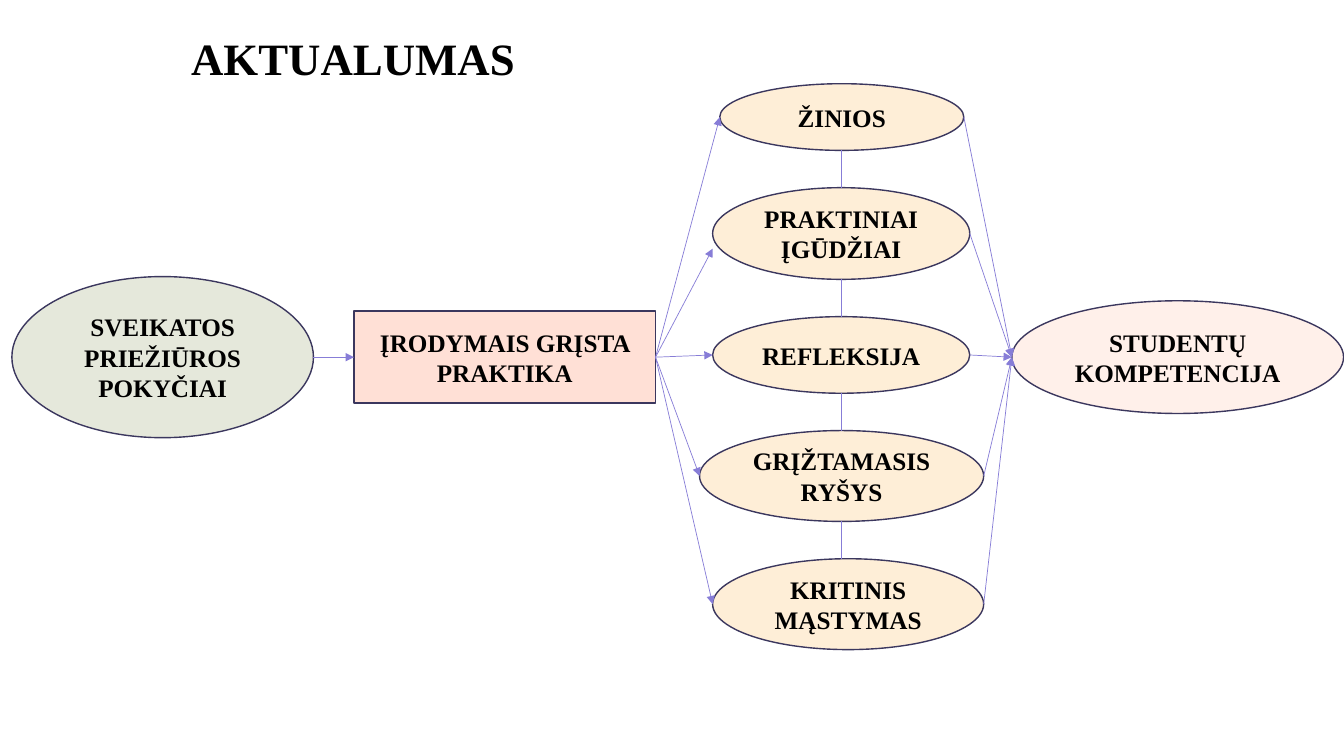
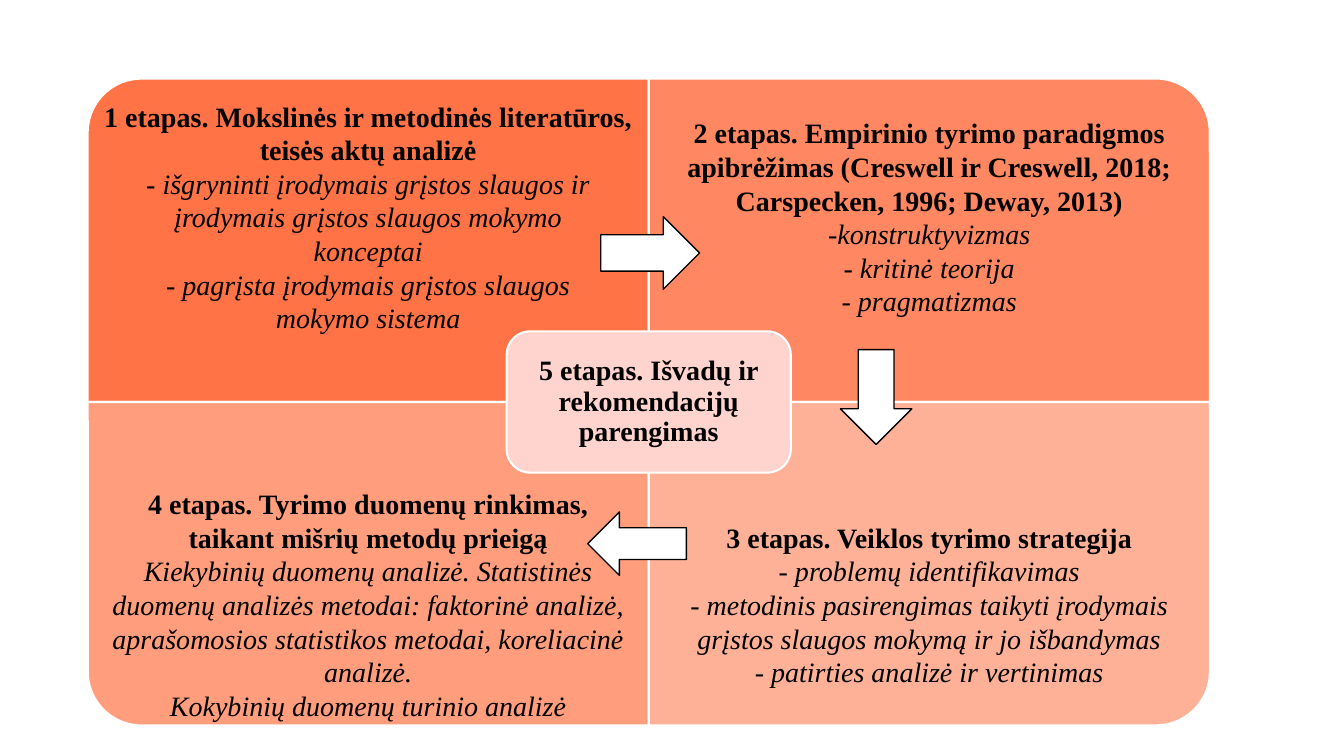
"""Builds two slides: a relevance diagram and the five stages of a study."""
from lxml import etree
from pptx import Presentation
from pptx.dml.color import RGBColor
from pptx.enum import shapes as kinds, text as layout
from pptx.oxml import ns
from pptx.util import Cm, Pt

FONT = "Times New Roman"
BLACK = RGBColor(0x00, 0x00, 0x00)
WHITE = RGBColor(0xFF, 0xFF, 0xFF)
OUTLINE = RGBColor(0x3B, 0x37, 0x5E)
LINK = RGBColor(0x87, 0x7D, 0xD7)
GREEN = RGBColor(0xE5, 0xE8, 0xDB)
PEACH = RGBColor(0xFF, 0xE0, 0xD6)
CREAM = RGBColor(0xFE, 0xEE, 0xD7)
BLUSH = RGBColor(0xFF, 0xF0, 0xEA)
ORANGE = RGBColor(0xFF, 0x64, 0x32)
PINK = RGBColor(0xFF, 0xD3, 0xCE)
SHAPE = kinds.MSO_SHAPE

FACTORS = [
    ("ŽINIOS", 18.14, 6.15, 1.68, 0),
    ("PRAKTINIAI ĮGŪDŽIAI", 17.96, 6.48, 2.31, 0.38),
    ("REFLEKSIJA", 17.96, 6.48, 1.93, 0),
    ("GRĮŽTAMASIS RYŠYS", 17.63, 7.16, 2.29, 0),
    ("KRITINIS MĄSTYMAS", 17.96, 6.83, 2.29, 0),
]
FACTOR_TOP, FACTOR_GAP, FACTOR_AXIS = 2.11, 0.94, 21.2
MIDDLE = 9.0

QUARTER_LEFT, QUARTER_TOP = 2.21, 1.98
QUARTER_WIDTH, QUARTER_HEIGHT = 14.14, 8.15
STAGE_TEXT_HEIGHT = 6.12
STAGES = [
    (0, 0, 270, 90, 2.4, [
        "1 etapas. Mokslinės ir metodinės literatūros, teisės aktų analizė",
        "- išgryninti įrodymais grįstos slaugos ir įrodymais grįstos slaugos mokymo",
        "konceptai",
        "- pagrįsta įrodymais grįstos slaugos",
        "mokymo sistema"]),
    (1, 0, 0, 77, 2.4, [
        "2 etapas. Empirinio tyrimo paradigmos apibrėžimas "
        "(Creswell ir Creswell, 2018; Carspecken, 1996; Deway, 2013)",
        "-konstruktyvizmas",
        "- kritinė teorija",
        "- pragmatizmas"]),
    (0, 1, 180, 63, 12.17, [
        "4 etapas. Tyrimo duomenų rinkimas, taikant mišrių metodų prieigą",
        "Kiekybinių duomenų analizė. Statistinės duomenų analizės metodai: "
        "faktorinė analizė, aprašomosios statistikos metodai, koreliacinė analizė.",
        "Kokybinių duomenų turinio analizė"]),
    (1, 1, 90, 50, 12.17, [
        "3 etapas. Veiklos tyrimo strategija",
        "- problemų identifikavimas",
        "- metodinis pasirengimas taikyti įrodymais grįstos slaugos mokymą "
        "ir jo išbandymas",
        "- patirties analizė ir vertinimas"]),
]
ARROWS = [
    (SHAPE.RIGHT_ARROW, 15.14, 5.46, 2.49, 1.83),
    (SHAPE.DOWN_ARROW, 21.18, 8.81, 1.8, 2.39),
    (SHAPE.LEFT_ARROW, 14.81, 12.9, 2.49, 1.6),
]


def write(box, lines, size=18, spacing=1.0, margin=None):
    """Fill a box with a bold first line and italic lines after it."""
    frame = box.text_frame
    frame.word_wrap = True
    frame.vertical_anchor = layout.MSO_ANCHOR.MIDDLE
    if margin is not None:
        frame.margin_left = frame.margin_right = Cm(margin)
        frame.margin_top = frame.margin_bottom = Cm(margin)
    for index, line in enumerate(lines):
        para = frame.add_paragraph() if index else frame.paragraphs[0]
        para.alignment = layout.PP_ALIGN.CENTER
        para.line_spacing = spacing
        span = para.add_run()
        span.text = line
        span.font.name, span.font.size = FONT, Pt(size)
        span.font.color.rgb = BLACK
        span.font.bold, span.font.italic = index == 0, index > 0


def add_text(page, left, top, width, height, lines, **style):
    """Add a text box."""
    box = page.shapes.add_textbox(Cm(left), Cm(top), Cm(width), Cm(height))
    write(box, lines, **style)


def add_box(page, kind, left, top, width, height, fill, line=OUTLINE, weight=1):
    """Add a filled and outlined preset shape."""
    box = page.shapes.add_shape(kind, Cm(left), Cm(top), Cm(width), Cm(height))
    box.shadow.inherit = False
    box.fill.solid()
    box.fill.fore_color.rgb = fill
    box.line.color.rgb = line
    box.line.width = Pt(weight)
    return box


def add_node(page, kind, left, top, width, height, fill, label):
    """Add a labelled node of the diagram."""
    box = add_box(page, kind, left, top, width, height, fill)
    write(box, [label])
    return box


def add_link(page, start, end, arrow=True):
    """Add a thin line, with an arrowhead at its end if asked."""
    link = page.shapes.add_connector(
        kinds.MSO_CONNECTOR.STRAIGHT, *(Cm(value) for value in (*start, *end)))
    link.line.color.rgb = LINK
    link.line.width = Pt(0.5)
    if arrow:
        head = etree.SubElement(link.line._get_or_add_ln(), ns.qn("a:tailEnd"))
        head.set("type", "triangle")
    etree.SubElement(link._element.spPr, ns.qn("a:effectLst"))
    return link


def add_quarter(page, column, row, turn, opacity):
    """Add a translucent quarter with its rounded corner turned outwards."""
    width, height = QUARTER_WIDTH, QUARTER_HEIGHT
    center_x = QUARTER_LEFT + (column + 0.5) * width
    center_y = QUARTER_TOP + (row + 0.5) * height
    if turn % 180:
        width, height = height, width
    box = add_box(page, SHAPE.ROUND_1_RECTANGLE, center_x - width / 2,
                  center_y - height / 2, width, height, ORANGE, WHITE, 1.5)
    box.rotation = turn
    color = box._element.spPr.find(ns.qn("a:solidFill"))[0]
    etree.SubElement(color, ns.qn("a:alpha")).set("val", str(opacity * 1000))


def build_relevance(page):
    """Draw the path from changes in care to student competence."""
    add_text(page, 0.5, 0.6, 16.8, 1.68, ["AKTUALUMAS"], size=32)
    practice = add_node(page, SHAPE.RECTANGLE, 8.92, MIDDLE - 1.16, 7.6, 2.32,
                        PEACH, "ĮRODYMAIS GRĮSTA PRAKTIKA")
    add_node(page, SHAPE.OVAL, 25.5, MIDDLE - 1.42, 8.36, 2.84,
             BLUSH, "STUDENTŲ KOMPETENCIJA")
    add_node(page, SHAPE.OVAL, 0.3, MIDDLE - 2.03, 7.6, 4.06,
             GREEN, "SVEIKATOS PRIEŽIŪROS POKYČIAI")
    add_link(page, (7.9, MIDDLE), (8.92, MIDDLE)).end_connect(practice, 1)
    top = FACTOR_TOP
    for index, (label, left, width, height, shift) in enumerate(FACTORS):
        center = top + height / 2
        add_node(page, SHAPE.OVAL, left, top, width, height, CREAM, label)
        incoming = add_link(page, (16.52, MIDDLE), (left, center + shift))
        incoming.begin_connect(practice, 3)
        add_link(page, (left + width, center), (25.5, MIDDLE))
        if index:
            add_link(page, (FACTOR_AXIS, top - FACTOR_GAP), (FACTOR_AXIS, top),
                     arrow=False)
        top += height + FACTOR_GAP


def build_stages(page):
    """Draw the four stages around the concluding fifth one."""
    for column, row, turn, opacity, text_top, lines in STAGES:
        add_quarter(page, column, row, turn, opacity)
        add_text(page, QUARTER_LEFT + column * QUARTER_WIDTH, text_top,
                 QUARTER_WIDTH, STAGE_TEXT_HEIGHT, lines, size=20, margin=0.4)
    width, height = 7.16, 3.56
    center = add_box(page, SHAPE.ROUNDED_RECTANGLE,
                     QUARTER_LEFT + QUARTER_WIDTH - width / 2,
                     QUARTER_TOP + QUARTER_HEIGHT - height / 2,
                     width, height, PINK, WHITE, 1.5)
    write(center, ["5 etapas. Išvadų ir rekomendacijų parengimas"],
          size=20, spacing=0.9, margin=0.2)
    for kind, *place in ARROWS:
        add_box(page, kind, *place, WHITE, BLACK)


def main():
    """Build and save the deck."""
    deck = Presentation()
    deck.slide_width, deck.slide_height = Cm(33.87), Cm(19.05)
    for build in (build_relevance, build_stages):
        build(deck.slides.add_slide(deck.slide_layouts[6]))
    deck.save("out.pptx")


if __name__ == "__main__":
    main()
